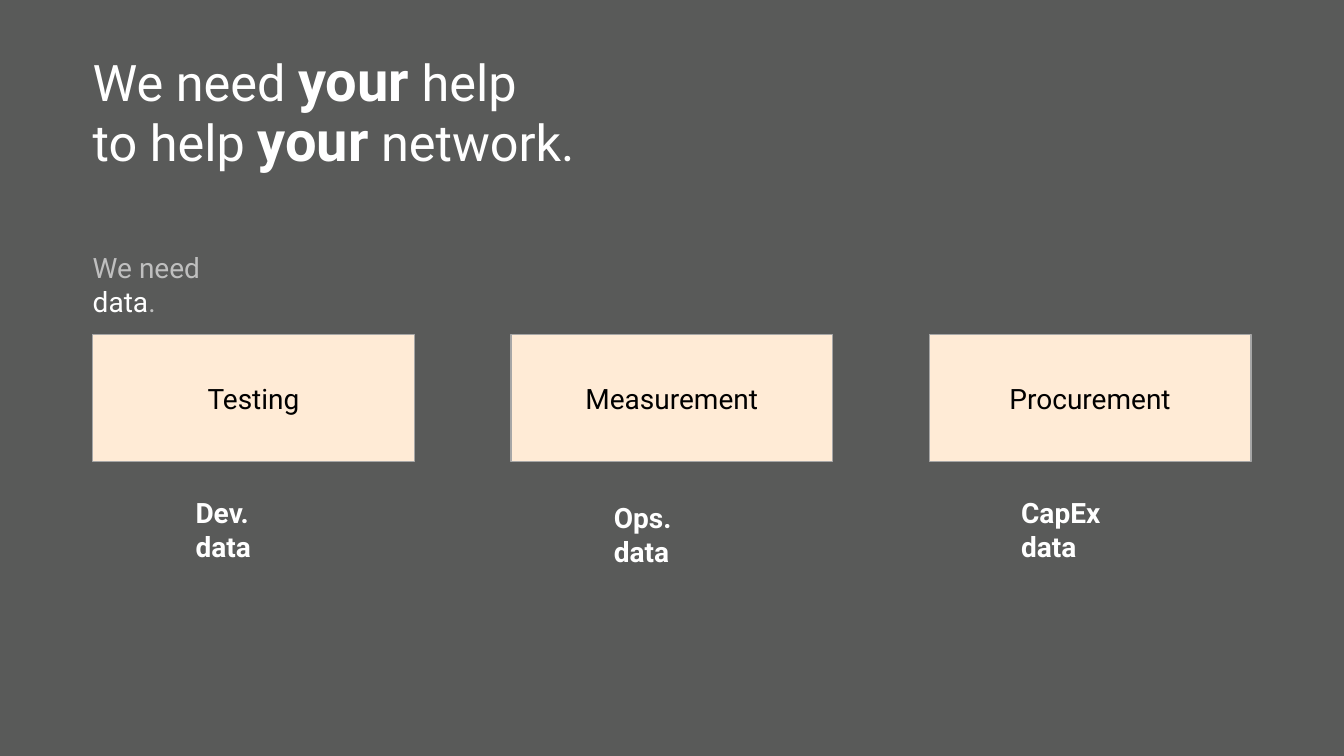
"""Build the slide that asks for help with network data."""
import pptx
import pptx.dml.color
import pptx.enum.shapes
import pptx.enum.text
import pptx.util

Pt = pptx.util.Pt
ALIGN = pptx.enum.text.PP_ALIGN
ANCHOR = pptx.enum.text.MSO_ANCHOR
FIT = pptx.enum.text.MSO_AUTO_SIZE
RECT = pptx.enum.shapes.MSO_SHAPE.RECTANGLE


def color(code):
    return pptx.dml.color.RGBColor.from_string(code)


def write(para, text, size, code, bold=False):
    run = para.add_run()
    run.text = text
    font = run.font
    font.name = "Roboto"
    font.size = Pt(size)
    font.bold = bold
    font.color.rgb = color(code)


deck = pptx.Presentation()
deck.slide_width = Pt(960)
deck.slide_height = Pt(540)
slide = deck.slides.add_slide(deck.slide_layouts[5])
slide.background.fill.solid()
slide.background.fill.fore_color.rgb = color("595A59")

title = slide.shapes.title
title.left, title.top = Pt(66.24), Pt(28.8)
title.width, title.height = Pt(828), Pt(104.4)
frame = title.text_frame
frame.margin_left = frame.margin_right = 0
frame.margin_top = frame.margin_bottom = 0
frame.vertical_anchor = ANCHOR.MIDDLE
frame.auto_size = FIT.NONE
frame.word_wrap = True
para = frame.paragraphs[0]
para.alignment = ALIGN.LEFT
para.line_spacing = 0.9
write(para, "We need ", 36, "FFFFFF")
write(para, "your", 40, "FFFFFF", True)
write(para, " help", 36, "FFFFFF")
para.add_line_break()
write(para, "to help ", 36, "FFFFFF")
write(para, "your", 40, "FFFFFF", True)
write(para, " network.", 36, "FFFFFF")

for col, name in enumerate(["Testing", "Measurement", "Procurement"]):
    box = slide.shapes.add_shape(
        RECT, Pt(66.24 + 298.8 * col), Pt(239), Pt(229.7), Pt(90.7))
    box.shadow.inherit = False
    box.fill.solid()
    box.fill.fore_color.rgb = color("FFEBD6")
    box.line.color.rgb = color("A6A6A6")
    box.line.width = Pt(1)
    box.text_frame.vertical_anchor = ANCHOR.MIDDLE
    para = box.text_frame.paragraphs[0]
    para.alignment = ALIGN.CENTER
    write(para, name, 20, "000000")

need = [("We need ", "BFBFBF", False), ("data", "FFFFFF", False),
        (".", "BFBFBF", False)]
notes = [
    (66.24, 179.3, 120, need),
    (139.7, 354.2, 78, [("Dev. data", "FFFFFF", True)]),
    (438.5, 357.8, 80, [("Ops. data", "FFFFFF", True)]),
    (729.4, 354.2, 96, [("CapEx data", "FFFFFF", True)]),
]
for left, top, width, runs in notes:
    note = slide.shapes.add_textbox(Pt(left), Pt(top), Pt(width), Pt(24.5))
    frame = note.text_frame
    frame.margin_left = frame.margin_right = 0
    frame.margin_top = frame.margin_bottom = 0
    frame.word_wrap = True
    frame.auto_size = FIT.SHAPE_TO_FIT_TEXT
    for text, code, bold in runs:
        write(frame.paragraphs[0], text, 20, code, bold)

deck.save("out.pptx")
